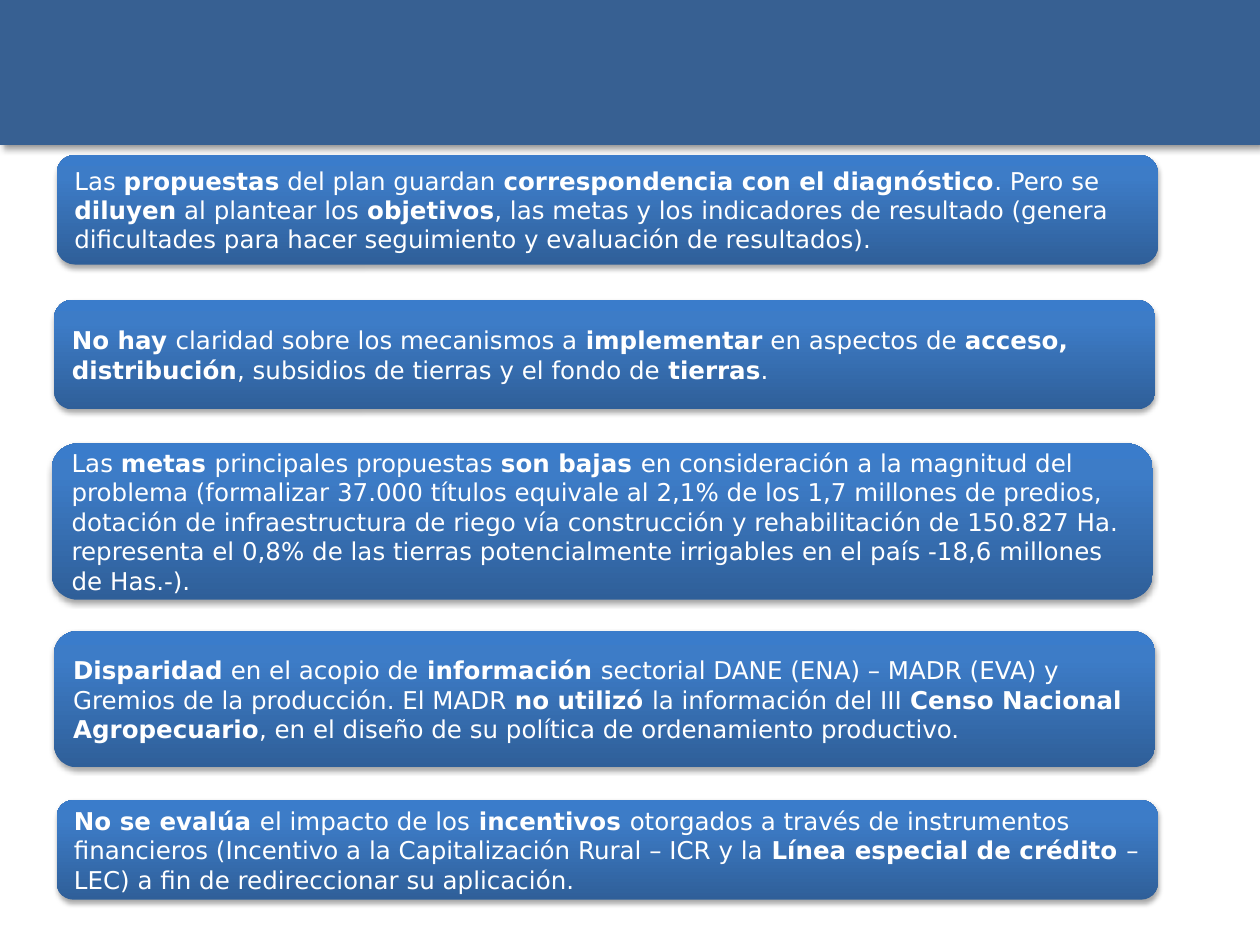
from copy import deepcopy
from dataclasses import dataclass

from lxml.etree import SubElement
from pptx import Presentation
from pptx.dml.color import RGBColor
from pptx.enum.shapes import MSO_SHAPE
from pptx.enum.text import MSO_ANCHOR, PP_ALIGN
from pptx.oxml.ns import qn
from pptx.util import Inches, Pt


@dataclass(frozen=True)
class Shadow:
    """Opacity in percent, blur and distance in points, angle in degrees."""
    opacity: int
    blur: float
    distance: float
    angle: int


@dataclass(frozen=True)
class Theme:
    font: str = "DejaVu Sans"
    body_size: float = 14
    text: str = "FFFFFF"
    band: str = "376092"
    shadow_color: str = "000000"
    card_gradient: tuple = ((0, "2F5F99"), (0.8, "3D7CC7"), (1, "3A7CCB"))
    band_shadow: Shadow = Shadow(40, 4, 3, 45)
    card_shadow: Shadow = Shadow(35, 3.1, 1.8, 90)


class SlideBuilder:
    def __init__(self, slide, theme):
        self.slide = slide
        self.theme = theme

    def _block(self, preset, left, top, width, height, shadow):
        block = self.slide.shapes.add_shape(
            preset, Inches(left), Inches(top), Inches(width), Inches(height))
        block.line.fill.background()
        block.shadow.inherit = False
        effects = block._element.spPr.find(qn("a:effectLst"))
        outer = SubElement(
            effects, qn("a:outerShdw"),
            blurRad=str(Pt(shadow.blur)), dist=str(Pt(shadow.distance)),
            dir=str(shadow.angle * 60000), rotWithShape="0")
        color = SubElement(outer, qn("a:srgbClr"), val=self.theme.shadow_color)
        SubElement(color, qn("a:alpha"), val=str(shadow.opacity * 1000))
        return block

    def band(self, width, height):
        band = self._block(MSO_SHAPE.RECTANGLE, 0, 0, width, height,
                           self.theme.band_shadow)
        band.fill.solid()
        band.fill.fore_color.rgb = RGBColor.from_string(self.theme.band)

    def card(self, left, top, width, height, text):
        card = self._block(MSO_SHAPE.ROUNDED_RECTANGLE, left, top, width, height,
                           self.theme.card_shadow)
        self._apply_gradient(card)
        frame = card.text_frame
        frame.word_wrap = True
        frame.vertical_anchor = MSO_ANCHOR.MIDDLE
        frame.paragraphs[0].alignment = PP_ALIGN.LEFT
        self._write(frame.paragraphs[0], text)

    def _apply_gradient(self, card):
        card.fill.gradient()
        card.fill.gradient_angle = 90
        stop_list = card._element.spPr.find(".//" + qn("a:gsLst"))
        stop_list.append(deepcopy(stop_list[-1]))
        for stop, (position, color) in zip(card.fill.gradient_stops,
                                           self.theme.card_gradient):
            stop.position = position
            stop.color.rgb = RGBColor.from_string(color)

    def _write(self, paragraph, text):
        """Write text in which ** switches bold on and off."""
        for index, part in enumerate(text.split("**")):
            if not part:
                continue
            run = paragraph.add_run()
            run.text = part
            run.font.name = self.theme.font
            run.font.size = Pt(self.theme.body_size)
            run.font.color.rgb = RGBColor.from_string(self.theme.text)
            run.font.bold = index % 2 == 1


SLIDE_WIDTH, SLIDE_HEIGHT = 10, 7.5
BAND_HEIGHT = 1.15
CARD_WIDTH = 8.74

# left, top, height, text
FINDINGS = [
    (0.45, 1.23, 0.87,
     "Las **propuestas** del plan guardan **correspondencia con el diagnóstico**. "
     "Pero se **diluyen** al plantear los **objetivos**, las metas y los indicadores "
     "de resultado (genera dificultades para hacer seguimiento y evaluación de "
     "resultados)."),
    (0.43, 2.38, 0.87,
     "**No hay **claridad sobre los mecanismos a **implementar** en aspectos de "
     "**acceso, distribución**, subsidios de tierras y el fondo de **tierras**."),
    (0.41, 3.52, 1.24,
     "Las **metas **principales propuestas **son bajas **en consideración a la "
     "magnitud del problema (formalizar 37.000 títulos equivale al 2,1% de los 1,7 "
     "millones de predios, dotación de infraestructura de riego vía construcción y "
     "rehabilitación de 150.827 Ha. representa el 0,8% de las tierras potencialmente "
     "irrigables en el país -18,6 millones de Has.-)."),
    (0.43, 5.01, 1.08,
     "**Disparidad** en el acopio de** información **sectorial DANE (ENA) – MADR (EVA) "
     "y Gremios de la producción. El MADR **no utilizó **la información del III "
     "**Censo Nacional Agropecuario**, en el diseño de su política de ordenamiento "
     "productivo."),
    (0.45, 6.35, 0.79,
     "**No se evalúa **el impacto de los** incentivos **otorgados a través de "
     "instrumentos financieros (Incentivo a la Capitalización Rural – ICR y la "
     "**Línea especial de crédito **– LEC) a fin de redireccionar su aplicación."),
]


def main():
    deck = Presentation()
    deck.slide_width = Inches(SLIDE_WIDTH)
    deck.slide_height = Inches(SLIDE_HEIGHT)
    blank_layout = deck.slide_layouts[6]
    builder = SlideBuilder(deck.slides.add_slide(blank_layout), Theme())
    builder.band(SLIDE_WIDTH, BAND_HEIGHT)
    for left, top, height, text in FINDINGS:
        builder.card(left, top, CARD_WIDTH, height, text)
    deck.save("out.pptx")


if __name__ == "__main__":
    main()
